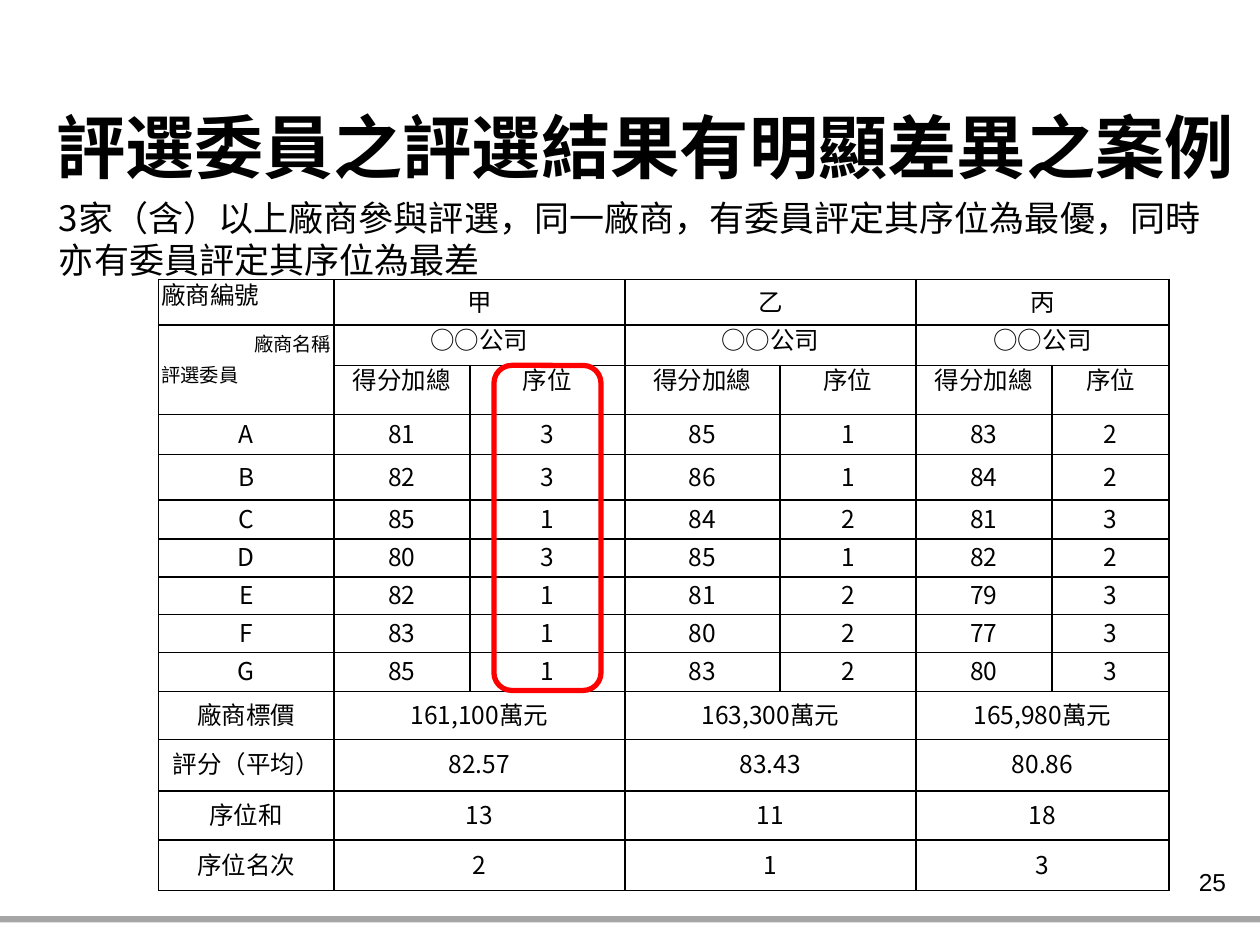
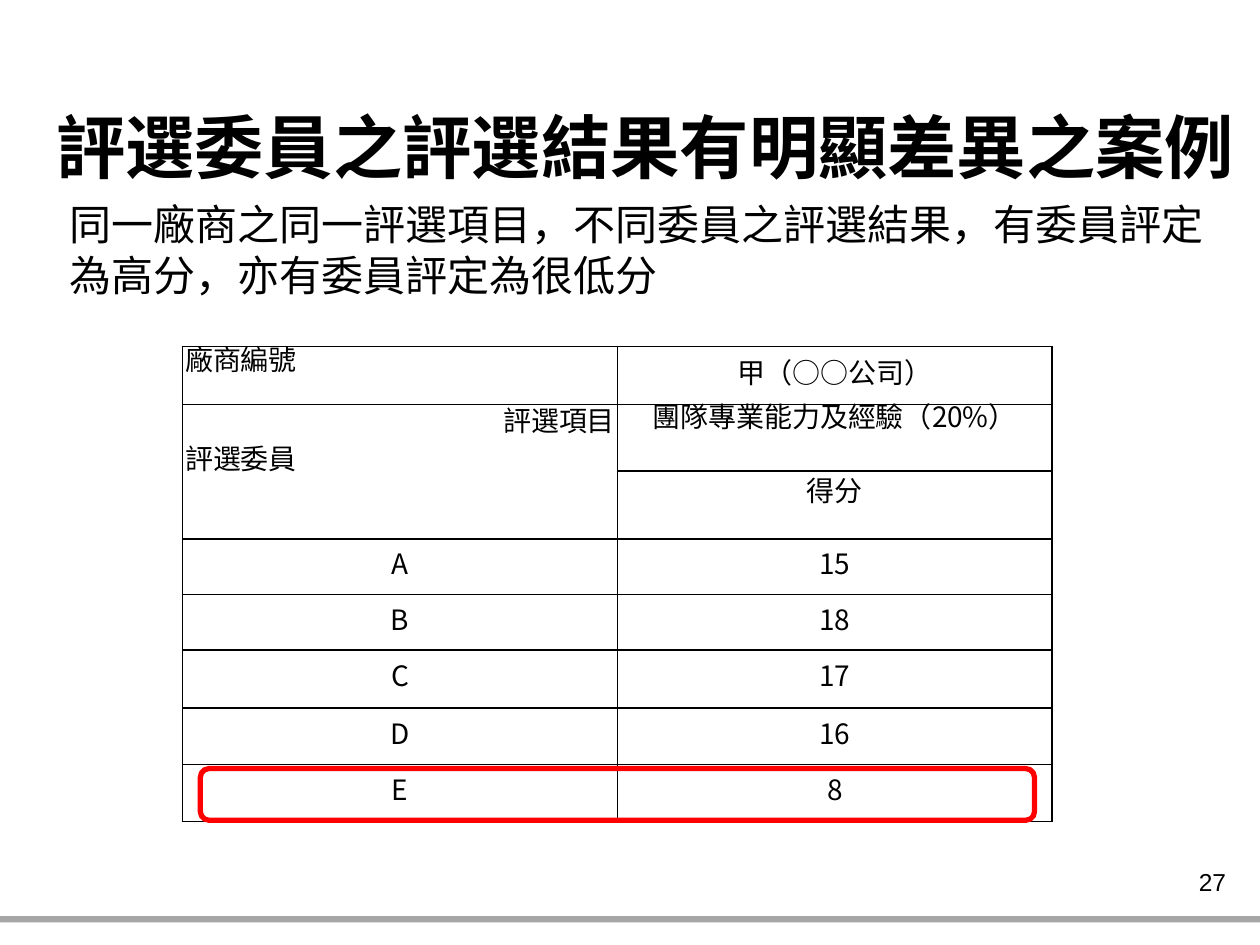
from itertools import groupby
from typing import NamedTuple

from lxml.etree import SubElement
from pptx import Presentation
from pptx.dml.color import RGBColor
from pptx.enum.shapes import MSO_SHAPE
from pptx.enum.text import MSO_ANCHOR, PP_ALIGN
from pptx.oxml import parse_xml
from pptx.oxml.ns import nsdecls, qn
from pptx.util import Inches, Pt

COLORS = {"text": "000000", "band": "A6A6A6", "frame": "FF0000", "border": "000000"}
SANS, SERIF, ARIAL, EAST = "Noto Sans CJK SC", "Times New Roman", "Arial", "Noto Sans CJK TC"
TITLE = "評選委員之評選結果有明顯差異之案例"


class Line(NamedTuple):
    text: str
    size: float
    align: PP_ALIGN = PP_ALIGN.CENTER
    spacing: float = 18


def apply(target, **values):
    for name, value in values.items():
        setattr(target, name, value)


def rgb(name):
    return RGBColor.from_string(COLORS[name])


class Deck:
    def __init__(self):
        self.prs = Presentation()
        apply(self.prs, slide_width=Inches(10), slide_height=Inches(7.5))
        self.s = None

    def slide(self, number):
        self.s = self.prs.slides.add_slide(self.prs.slide_layouts[6])
        band = self.shape(MSO_SHAPE.RECTANGLE, -0.01, 7.27, 10.02, 0.05)
        band.fill.solid()
        band.fill.fore_color.rgb = rgb("band")
        band.line.fill.background()
        self.text(str(number), 7.5, 6.83, 2.33, 0.52, font=ARIAL, size=14, align=PP_ALIGN.RIGHT)
        self.text(TITLE, 0.24, 0.69, 9.76, 0.94, size=39.6, bold=True,
                  align=PP_ALIGN.CENTER, anchor=MSO_ANCHOR.MIDDLE)

    def shape(self, kind, x, y, w, h):
        sp = self.s.shapes.add_shape(kind, Inches(x), Inches(y), Inches(w), Inches(h))
        sp.shadow.inherit = False
        return sp

    def frame(self, x, y, w, h):
        sp = self.shape(MSO_SHAPE.ROUNDED_RECTANGLE, x, y, w, h)
        sp.fill.background()
        sp.line.color.rgb = rgb("frame")
        sp.line.width = Pt(3)

    def run(self, p, text, font, size, bold=False):
        r = p.add_run()
        r.text = text
        apply(r.font, name=font, size=Pt(size), bold=bold)
        r.font.color.rgb = rgb("text")
        SubElement(r.font._element, qn("a:ea"), typeface=EAST)

    def text(self, text, x, y, w, h, size, font=SANS, bold=False,
             align=PP_ALIGN.LEFT, anchor=MSO_ANCHOR.TOP, spacing=None):
        sp = self.s.shapes.add_textbox(Inches(x), Inches(y), Inches(w), Inches(h))
        apply(sp.text_frame, word_wrap=True, vertical_anchor=anchor)
        p = sp.text_frame.paragraphs[0]
        apply(p, alignment=align, line_spacing=spacing)
        self.run(p, text, font, size, bold)

    def cell(self, cell, lines, anchor):
        side = Inches(0.02)
        apply(cell, margin_left=side, margin_right=side, margin_top=0, margin_bottom=0,
              vertical_anchor=anchor)
        cell.fill.background()
        for i, edge in enumerate(("lnL", "lnR", "lnT", "lnB")):
            cell._tc.tcPr.insert(i, parse_xml(
                f'<a:{edge} {nsdecls("a")} w="12700"><a:solidFill>'
                f'<a:srgbClr val="{COLORS["border"]}"/></a:solidFill></a:{edge}>'))
        tf = cell.text_frame
        for i, line in enumerate(lines):
            p = tf.add_paragraph() if i else tf.paragraphs[0]
            apply(p, alignment=line.align, line_spacing=Pt(line.spacing))
            for ascii_part, chars in groupby(line.text, str.isascii):
                self.run(p, "".join(chars), SANS if ascii_part else SERIF, line.size)

    def table(self, x, y, widths, heights, rows, size, merges):
        sp = self.s.shapes.add_table(len(rows), len(widths), Inches(x), Inches(y),
                                     Inches(sum(widths)), Inches(sum(heights)))
        table = sp.table
        apply(table, first_row=False, horz_banding=False)
        for column, width in zip(table.columns, widths):
            column.width = Inches(width)
        for row, height in zip(table.rows, heights):
            row.height = Inches(height)
        for r, row in enumerate(rows):
            for c, value in enumerate(row):
                lines = [Line(value, size)] if isinstance(value, str) else value
                top = r in (1, 2) or r == c == 0
                self.cell(table.cell(r, c), lines, MSO_ANCHOR.TOP if top else MSO_ANCHOR.MIDDLE)
        for start, end in merges:
            table.cell(*start).merge(table.cell(*end))


def spread(label, values):
    return [label] + [part for value in values for part in (value, "")]


def ranking_slide(deck):
    deck.slide(25)
    deck.text("3家（含）以上廠商參與評選，同一廠商，有委員評定其序位為最優，同時亦有委員評定其序位為最差",
              0.37, 1.51, 9.46, 0.77, size=20, spacing=Pt(24))
    corner = [Line("廠商名稱", 11, PP_ALIGN.RIGHT), Line("評選委員", 11, PP_ALIGN.LEFT)]
    scores = [
        ("A", 81, 3, 85, 1, 83, 2),
        ("B", 82, 3, 86, 1, 84, 2),
        ("C", 85, 1, 84, 2, 81, 3),
        ("D", 80, 3, 85, 1, 82, 2),
        ("E", 82, 1, 81, 2, 79, 3),
        ("F", 83, 1, 80, 2, 77, 3),
        ("G", 85, 1, 83, 2, 80, 3),
    ]
    rows = [
        spread([Line("廠商編號", 14, PP_ALIGN.LEFT)], "甲乙丙"),
        spread(corner, ["○○公司"] * 3),
        [""] + ["得分加總", "序位"] * 3,
        *[[str(value) for value in row] for row in scores],
        spread("廠商標價", ["161,100萬元", "163,300萬元", "165,980萬元"]),
        spread("評分（平均）", ["82.57", "83.43", "80.86"]),
        spread("序位和", ["13", "11", "18"]),
        spread("序位名次", ["2", "1", "3"]),
    ]
    merges = [((r, c), (r, c + 1)) for r in (0, 1, 10, 11, 12, 13) for c in (1, 3, 5)]
    deck.table(1.26, 2.22, [1.39, 1.08, 1.23, 1.23, 1.08, 1.08, 0.93],
               [0.36, 0.32, 0.39, 0.32, 0.36, 0.31, 0.3, 0.3, 0.3, 0.31, 0.38, 0.41, 0.39, 0.4],
               rows, 14, merges + [((1, 0), (2, 0))])
    deck.frame(3.92, 2.9, 0.85, 2.58)


def item_score_slide(deck):
    deck.slide(27)
    deck.text("同一廠商之同一評選項目，不同委員之評選結果，有委員評定為高分，亦有委員評定為很低分",
              0.45, 1.53, 9.21, 0.91, size=24, spacing=Pt(28.8))
    corner = [Line("評選項目", 16, PP_ALIGN.RIGHT, 20), Line("評選委員", 16, PP_ALIGN.LEFT, 22)]
    rows = [
        [[Line("廠商編號", 16, PP_ALIGN.LEFT)], "甲（○○公司）"],
        [corner, "團隊專業能力及經驗（20%）"],
        ["", [Line("得分", 16, spacing=22)]],
        *zip("ABCDE", ("15", "18", "17", "16", "8")),
    ]
    deck.table(1.45, 2.75, [3.45] * 2, [0.46, 0.53, 0.54, 0.44, 0.44, 0.46, 0.45, 0.45],
               rows, 16, [((1, 0), (2, 0))])
    deck.frame(1.59, 6.1, 6.62, 0.41)


def main():
    deck = Deck()
    ranking_slide(deck)
    item_score_slide(deck)
    deck.prs.save("out.pptx")


if __name__ == "__main__":
    main()
